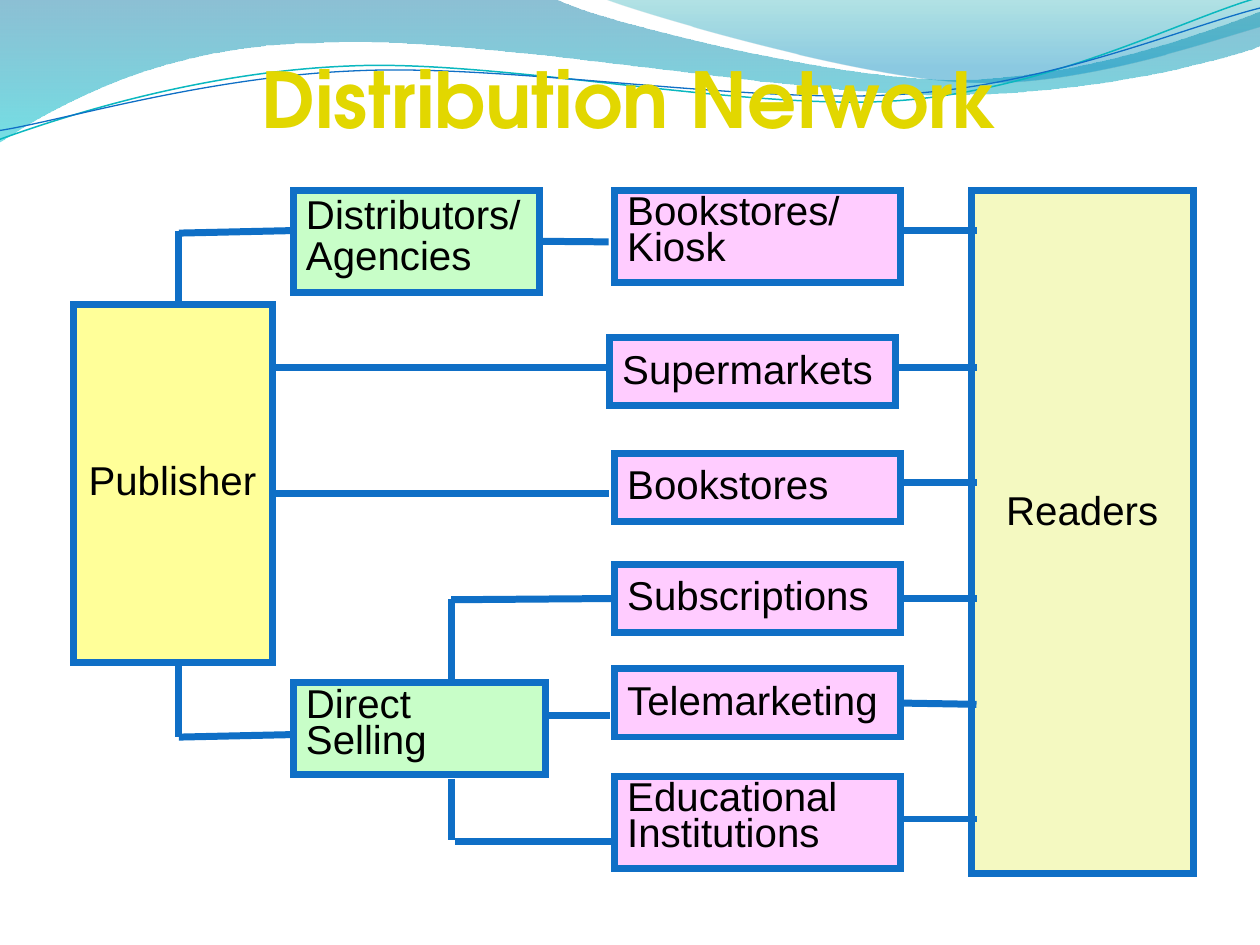
from lxml import etree
from pptx import Presentation
from pptx import util as u
from pptx.dml.color import RGBColor
from pptx.enum import shapes, text
from pptx.oxml.ns import qn

BLUE, PINK, GREEN = "0F6FC6", "FFCCFF", "C8FEC8"
LEFT, RIGHT = 1, 3  # connection sites of a rectangle


def color(value):
    return RGBColor.from_string(value)


def write(frame, content, size=23, font="Arial", fill="000000", bold=False,
          align=text.PP_ALIGN.LEFT, spacing=1.0, anchor=text.MSO_ANCHOR.TOP, inset=0.05,
          wrap=True, fit=text.MSO_AUTO_SIZE.SHAPE_TO_FIT_TEXT):
    frame.word_wrap = wrap
    frame.auto_size = fit
    frame.vertical_anchor = anchor
    frame.margin_left = frame.margin_right = u.Inches(0.1)
    frame.margin_top, frame.margin_bottom = u.Inches(inset), u.Inches(0.05)
    frame.text = content
    for paragraph in frame.paragraphs:
        paragraph.alignment = align
        paragraph.line_spacing = spacing
        paragraph.font.size = u.Pt(size)
        paragraph.font.name = font
        paragraph.font.bold = bold
        paragraph.font.color.rgb = color(fill)


def add_box(slide, content, fill, left, top, width, height, **style):
    box = slide.shapes.add_shape(shapes.MSO_SHAPE.RECTANGLE,
                                 *map(u.Inches, (left, top, width, height)))
    box.shadow.inherit = False
    box.fill.solid()
    box.fill.fore_color.rgb = color(fill)
    box.line.color.rgb = color(BLUE)
    box.line.width = u.Pt(4)
    etree.SubElement(box.line._get_or_add_ln(), qn("a:miter"), lim="800000")
    write(box.text_frame, content, **style)
    return box


def add_link(slide, x1, y1, x2, y2, begin=None, end=None):
    """Draw a line; begin and end are optional (box, side) pairs to join."""
    link = slide.shapes.add_connector(shapes.MSO_CONNECTOR.STRAIGHT,
                                      *map(u.Inches, (x1, y1, x2, y2)))
    link.line.color.rgb = color(BLUE)
    link.line.width = u.Pt(4)
    etree.SubElement(link._element.spPr, qn("a:effectLst"))
    if begin:
        link.begin_connect(*begin)
    if end:
        link.end_connect(*end)


def bend(wave, segments):
    """Turn the straight segments that have control points into Bezier curves."""
    lines = wave._element.spPr.findall(".//" + qn("a:lnTo"))
    for line, segment in zip(lines, segments):
        if len(segment) == 2:
            continue
        line.tag = qn("a:cubicBezTo")
        for i, (x, y) in enumerate((segment[:2], segment[2:4])):
            control = etree.Element(qn("a:pt"), x=str(u.Inches(x) - wave.left),
                                    y=str(u.Inches(y) - wave.top))
            line.insert(i, control)


def add_wave(slide, start, segments, stops=None, line=None):
    """A band filled with (position, colour, opacity) stops, or an open tilted line."""
    builder = slide.shapes.build_freeform(*map(u.Inches, start), scale=1.0)
    builder.add_line_segments([tuple(map(u.Inches, s[-2:])) for s in segments],
                              close=bool(stops))
    wave = builder.convert_to_shape()
    bend(wave, segments)
    wave.shadow.inherit = False
    if line:
        wave.rotation = 357.3
        wave.fill.background()
        wave.line.color.rgb = color(line[0])
        wave.line.width = u.Pt(line[1])
        return
    wave.line.fill.background()
    wave.fill.gradient()
    wave.fill.gradient_angle = 270
    for stop, (position, value, _) in zip(wave.fill.gradient_stops, stops):
        stop.position = position
        stop.color.rgb = color(value)
    tints = wave._element.spPr.findall(".//" + qn("a:gs") + "/" + qn("a:srgbClr"))
    for tint, (_, _, opacity) in zip(tints, stops):
        etree.SubElement(tint, qn("a:alpha"), val=str(opacity * 1000))


def add_waves(slide):
    add_wave(slide, (0, -0.01), [
        (4.4, -0.01), (4.76, 0.17, 6.64, 0.63, 7.58, 0.63), (8.53, 0.63, 9.58, 0.26, 10, 0.09),
        (10.01, 0.36), (9.83, 0.44, 8.7, 0.76, 7.46, 0.75), (6.22, 0.75, 3.82, 0.28, 2.57, 0.34),
        (1.29, 0.35, 0.46, 0.83, -0.01, 1.13)],
        stops=[(0, "0074A1", 45), (1, "00C6CF", 55)])
    add_wave(slide, (4.79, -0.01), [
        (5.09, 0.11, 6.82, 0.62, 7.69, 0.65), (8.56, 0.69, 9.61, 0.32, 10, 0.21), (10, 0)],
        stops=[(0, "00A1A9", 30), (0.8, "008BBF", 45)])
    add_wave(slide, (-0.02, 0.87), [
        (0.47, 0.72, 1.58, 0.41, 2.78, 0.42), (3.96, 0.42, 5.91, 0.93, 7.12, 0.9),
        (8.32, 0.87, 9.4, 0.36, 10, 0.22)], line=("0AB8BF", 0.85))
    add_wave(slide, (-0.02, 0.8), [
        (0.46, 0.75, 1.64, 0.45, 2.83, 0.46), (4.04, 0.46, 5.96, 0.88, 7.16, 0.85),
        (8.35, 0.83, 9.42, 0.42, 10.02, 0.3)], line=(BLUE, 0.75))


def add_title(slide):
    title = slide.shapes.title
    title.left, title.top, title.width, title.height = map(u.Inches, (0.75, 0.33, 8.5, 1))
    write(title.text_frame, "Distribution Network", size=44, font="TeX Gyre Adventor",
          fill="E2D700", bold=True, align=text.PP_ALIGN.CENTER, spacing=0.85,
          anchor=text.MSO_ANCHOR.MIDDLE, fit=text.MSO_AUTO_SIZE.NONE)
    slide.shapes._spTree.append(title._element)  # in front of the waves


def add_network(slide):
    centre = text.PP_ALIGN.CENTER
    add_box(slide, "Readers", "F4F9C1", 7.71, 1.51, 1.76, 5.42, align=centre, inset=2.34)

    # Intermediaries
    distributors = add_box(slide, "Distributors/\nAgencies", GREEN, 2.33, 1.51, 1.95, 0.81,
                           spacing=0.85, wrap=False)
    add_box(slide, "Direct\nSelling", GREEN, 2.33, 5.42, 2, 0.73, spacing=0.75)

    # Outlets, each with its line to the readers: name, left, top, line start, joined
    outlets = {}
    for name, left, top, link_x, link_y, joined in [
            ("Bookstores/\nKiosk", 4.88, 1.51, 7.17, 1.83, False),
            ("Supermarkets", 4.84, 2.68, 7.08, 2.92, False),
            ("Bookstores", 4.88, 3.6, 7.17, 3.83, False),
            ("Subscriptions", 4.88, 4.48, 7.17, 4.75, True),
            ("Telemarketing", 4.88, 5.31, 7.17, 5.59, True),
            ("Educational\nInstitutions", 4.88, 6.16, 7.17, 6.5, False)]:
        two_lines = "\n" in name
        outlet = add_box(slide, name, PINK, left, top, 2.27, 0.73 if two_lines else 0.54,
                         spacing=0.75 if two_lines else 1.0, wrap=name != "Telemarketing")
        outlets[name] = outlet
        add_link(slide, link_x, link_y, 7.75, link_y, begin=(outlet, RIGHT) if joined else None)

    # Publisher to distributors and direct selling
    add_link(slide, 1.42, 1.83, 1.42, 2.43)
    add_link(slide, 1.42, 1.85, 2.33, 1.83)
    add_link(slide, 1.42, 5.25, 1.42, 5.85)
    add_link(slide, 1.42, 5.85, 2.33, 5.83)

    # Publisher and distributors to outlets
    add_link(slide, 4.28, 1.92, 4.83, 1.92, begin=(distributors, RIGHT))
    add_link(slide, 2.17, 2.92, 4.83, 2.92)
    add_link(slide, 2.17, 3.92, 4.83, 3.92)

    # Direct selling to outlets
    add_link(slide, 3.58, 4.75, 3.58, 5.43)
    add_link(slide, 3.58, 4.76, 4.88, 4.75, end=(outlets["Subscriptions"], LEFT))
    add_link(slide, 4.34, 5.68, 4.84, 5.68)
    add_link(slide, 3.58, 6.18, 3.58, 6.67)
    add_link(slide, 3.61, 6.68, 4.89, 6.68)

    # The publisher covers the ends of its lines
    add_box(slide, "Publisher", "FFFF99", 0.58, 2.42, 1.58, 2.84, align=centre, inset=1.19)


def main():
    deck = Presentation()
    deck.slide_width, deck.slide_height = u.Inches(10), u.Inches(7.5)
    slide = deck.slides.add_slide(deck.slide_layouts[5])
    add_waves(slide)
    add_title(slide)
    add_network(slide)
    deck.save("out.pptx")


if __name__ == "__main__":
    main()
